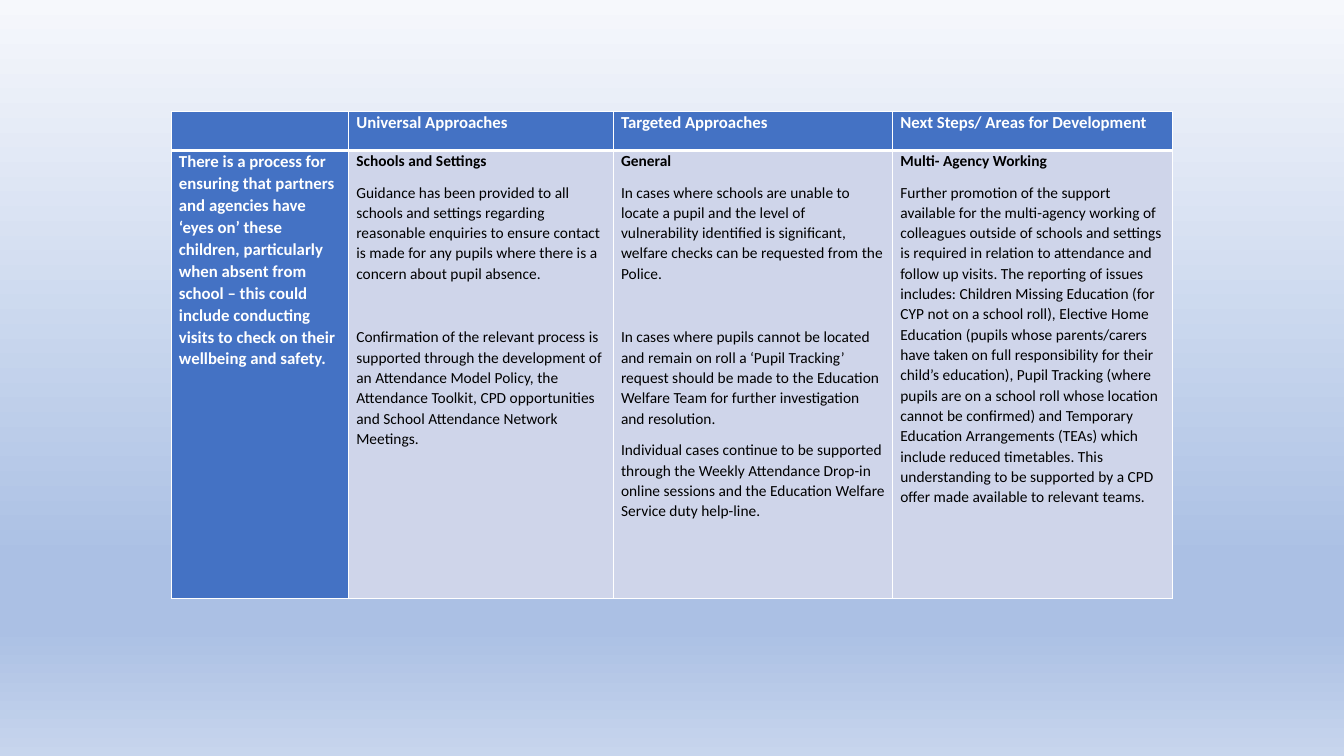
from pptx import Presentation
from pptx.dml.color import RGBColor
from pptx.oxml import parse_xml
from pptx.oxml.ns import nsdecls
from pptx.util import Cm, Pt

BLUE = RGBColor(0x44, 0x72, 0xC4)
PALE_BLUE = RGBColor(0xCF, 0xD5, 0xEA)
WHITE = RGBColor(0xFF, 0xFF, 0xFF)
BLACK = RGBColor(0x00, 0x00, 0x00)
SKY = [
    (0, RGBColor(0xF6, 0xF8, 0xFC)),
    (74, RGBColor(0xAB, 0xC0, 0xE4)),
    (83, RGBColor(0xAB, 0xC0, 0xE4)),
    (100, RGBColor(0xC7, 0xD5, 0xED)),
]

COLUMN_WIDTHS = [4.47, 6.67, 7.04, 7.04]
ROW_HEIGHTS = [0.99, 11.3]
SECTION_GAP = Pt(23)

HEADINGS = [
    "",
    "Universal Approaches",
    "Targeted Approaches",
    "Next Steps/ Areas for Development",
]
PROCESS = (
    "There is a process for ensuring that partners and agencies have ‘eyes on’ "
    "these children, particularly when absent from school – this could include "
    "conducting visits to check on their wellbeing and safety."
)
APPROACHES = [
    [
        "Schools and Settings",
        "Guidance has been provided to all schools and settings regarding "
        "reasonable enquiries to ensure contact is made for any pupils where "
        "there is a concern about pupil absence.",
        "Confirmation of the relevant process is supported through the "
        "development of an Attendance Model Policy, the Attendance Toolkit, CPD "
        "opportunities and School Attendance Network Meetings.",
    ],
    [
        "General",
        "In cases where schools are unable to locate a pupil and the level of "
        "vulnerability identified is significant, welfare checks can be "
        "requested from the Police.",
        "In cases where pupils cannot be located and remain on roll a ‘Pupil "
        "Tracking’ request should be made to the Education Welfare Team for "
        "further investigation and resolution.",
        "Individual cases continue to be supported through the Weekly "
        "Attendance Drop-in online sessions and the Education Welfare Service "
        "duty help-line.",
    ],
    [
        "Multi- Agency Working",
        "Further promotion of the support available for the multi-agency "
        "working of colleagues outside of schools and settings is required in "
        "relation to attendance and follow up visits. The reporting of issues "
        "includes: Children Missing Education (for CYP not on a school roll), "
        "Elective Home Education (pupils whose parents/carers have taken on "
        "full responsibility for their child’s education), Pupil Tracking "
        "(where pupils are on a school roll whose location cannot be confirmed) "
        "and Temporary Education Arrangements (TEAs) which include reduced "
        "timetables. This understanding to be supported by a CPD offer made "
        "available to relevant teams.",
    ],
]


def paint_background(slide):
    fill = slide.background.fill
    fill.gradient()
    fill.gradient_angle = 270
    stops = slide.element.xpath(".//p:bg//a:gsLst")[0]
    for stop in list(stops):
        stops.remove(stop)
    for percent, color in SKY:
        stops.append(parse_xml(
            f'<a:gs {nsdecls("a")} pos="{percent * 1000}">'
            f'<a:srgbClr val="{color}"/></a:gs>'))


def style_cell(cell, fill_color, top=1, bottom=1):
    cell.margin_left = cell.margin_right = Cm(0.19)
    cell.margin_top = cell.margin_bottom = 0
    properties = cell._tc.get_or_add_tcPr()
    for side, width in zip("LRTB", (1, 1, top, bottom)):
        properties.append(parse_xml(
            f'<a:ln{side} {nsdecls("a")} w="{Pt(width)}"><a:solidFill>'
            f'<a:srgbClr val="{WHITE}"/></a:solidFill></a:ln{side}>'))
    cell.fill.solid()
    cell.fill.fore_color.rgb = fill_color


def write_paragraph(paragraph, text, size, color, bold):
    paragraph.text = text
    paragraph.line_spacing = 1.07
    paragraph.space_after = Pt(8)
    for font in [paragraph.font] + [run.font for run in paragraph.runs]:
        font.name = "Calibri"
        font.size = Pt(size)
        font.bold = bold
        font.color.rgb = color


def write_heading(cell, text):
    write_paragraph(cell.text_frame.paragraphs[0], text, 12, WHITE, True)


def write_approach(cell, texts):
    frame = cell.text_frame
    for index, text in enumerate(texts):
        paragraph = frame.add_paragraph() if index else frame.paragraphs[0]
        write_paragraph(paragraph, text, 11, BLACK, index == 0)
        if index == 2:
            paragraph.space_before = SECTION_GAP


def add_approaches_table(slide):
    table = slide.shapes.add_table(
        len(ROW_HEIGHTS), len(COLUMN_WIDTHS), Cm(4.32), Cm(2.8),
        Cm(sum(COLUMN_WIDTHS)), Cm(sum(ROW_HEIGHTS))).table
    for column, width in zip(table.columns, COLUMN_WIDTHS):
        column.width = Cm(width)
    for row, height in zip(table.rows, ROW_HEIGHTS):
        row.height = Cm(height)

    for index, heading in enumerate(HEADINGS):
        header = table.cell(0, index)
        style_cell(header, BLUE, bottom=3)
        write_heading(header, heading)
        style_cell(table.cell(1, index), PALE_BLUE if index else BLUE, top=3)

    write_heading(table.cell(1, 0), PROCESS)
    for index, texts in enumerate(APPROACHES, start=1):
        write_approach(table.cell(1, index), texts)


def main():
    deck = Presentation()
    deck.slide_width = Cm(33.87)
    deck.slide_height = Cm(19.05)
    slide = deck.slides.add_slide(deck.slide_layouts[6])
    paint_background(slide)
    add_approaches_table(slide)
    deck.save("out.pptx")


if __name__ == "__main__":
    main()
